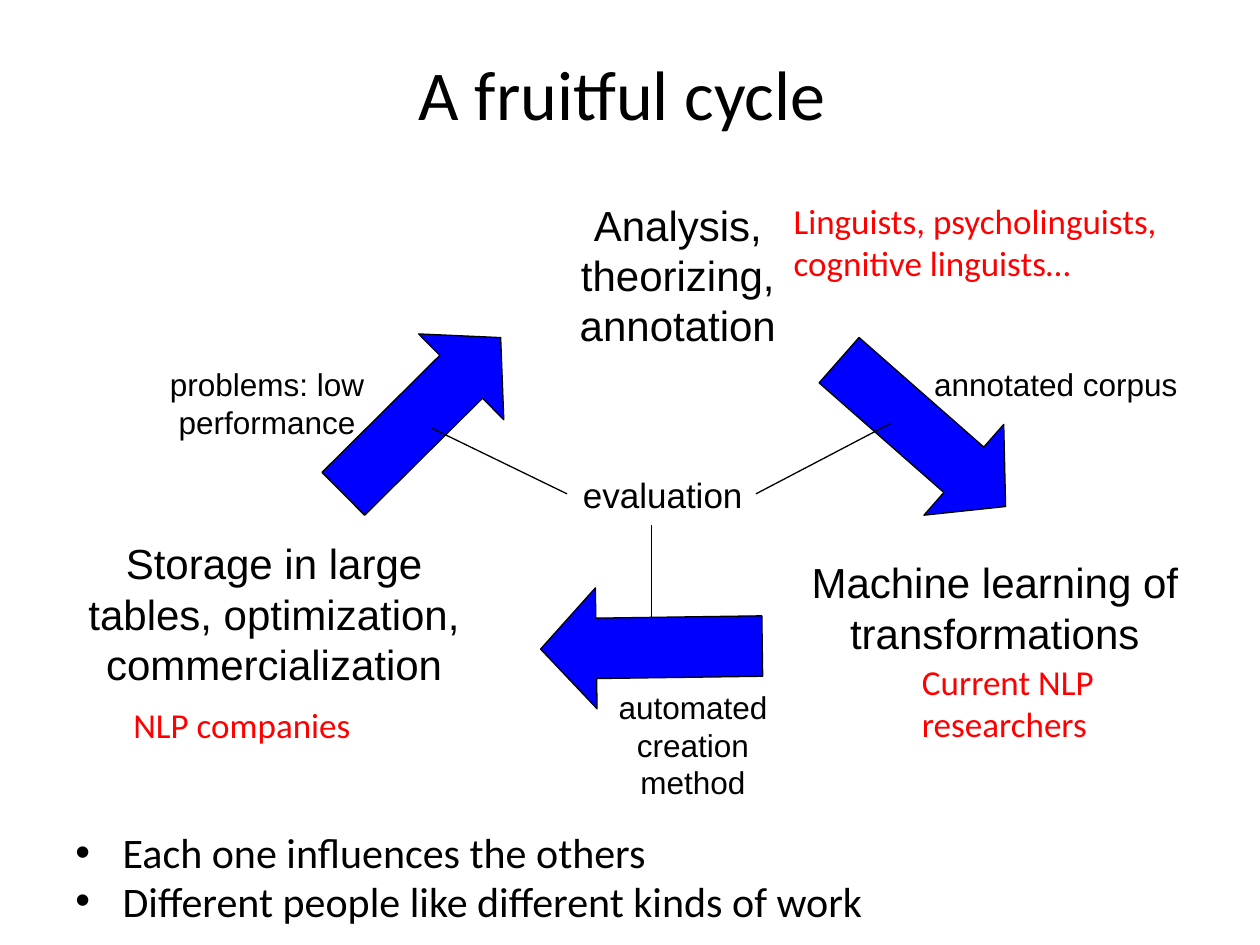
from dataclasses import dataclass

from lxml import etree
from pptx import Presentation
from pptx.dml.color import RGBColor
from pptx.enum.shapes import MSO_CONNECTOR, MSO_SHAPE
from pptx.enum.text import MSO_ANCHOR, MSO_AUTO_SIZE, PP_ALIGN
from pptx.oxml.ns import qn
from pptx.util import Pt

CENTER, LEFT = PP_ALIGN.CENTER, PP_ALIGN.LEFT
TOP, MIDDLE = MSO_ANCHOR.TOP, MSO_ANCHOR.MIDDLE
FIT_SHAPE, NO_FIT = MSO_AUTO_SIZE.SHAPE_TO_FIT_TEXT, MSO_AUTO_SIZE.NONE
RIGHT_ARROW = MSO_SHAPE.RIGHT_ARROW
STRAIGHT = MSO_CONNECTOR.STRAIGHT


@dataclass(frozen=True)
class Theme:
    ink: RGBColor = RGBColor(0, 0, 0)
    arrow: RGBColor = RGBColor(0, 0, 255)
    people: RGBColor = RGBColor(255, 0, 0)
    heading_font: str = "Calibri"
    diagram_font: str = "Arial"
    title_size: float = 40
    stage_size: float = 24
    note_size: float = 20
    label_size: float = 18
    line_width: float = 0.75


def set_format(target, values):
    for name, value in values.items():
        setattr(target, name, value)


class CycleSlide:
    def __init__(self, presentation, theme):
        self.theme = theme
        self.slide = presentation.slides.add_slide(presentation.slide_layouts[6])

    def text(self, box, lines, size, font, color=None, align=CENTER,
             anchor=TOP, fit=FIT_SHAPE):
        shape = self.slide.shapes.add_textbox(*map(Pt, box))
        frame = shape.text_frame
        set_format(frame, {"word_wrap": True, "auto_size": fit,
                           "vertical_anchor": anchor})
        frame.text = "\n".join(lines)
        for paragraph in frame.paragraphs:
            paragraph.alignment = align
            for run in paragraph.runs:
                set_format(run.font, {"name": font, "size": Pt(size)})
                run.font.color.rgb = color or self.theme.ink
        return shape

    def title(self, box, line):
        self.text(box, [line], self.theme.title_size, self.theme.heading_font,
                  anchor=MIDDLE, fit=NO_FIT)

    def diagram_text(self, box, lines, size):
        self.text(box, lines, size, self.theme.diagram_font)

    def people(self, box, line):
        self.text(box, [line], self.theme.note_size, self.theme.heading_font,
                  self.theme.people, LEFT)

    def bullets(self, box, lines):
        size = self.theme.stage_size
        shape = self.text(box, lines, size, self.theme.heading_font,
                          align=LEFT, fit=NO_FIT)
        for paragraph in shape.text_frame.paragraphs:
            set_format(paragraph, {"line_spacing": 0.8,
                                   "space_before": Pt(size * 0.2)})
            properties = paragraph._p.get_or_add_pPr()
            properties.set("marL", str(Pt(27)))
            properties.set("indent", str(Pt(-27)))
            etree.SubElement(properties, qn("a:buFont")).set("typeface", "Arial")
            etree.SubElement(properties, qn("a:buChar")).set("char", "•")

    def outline(self, line):
        line.color.rgb = self.theme.ink
        line.width = Pt(self.theme.line_width)

    def arrow(self, left, top, rotation):
        shape = self.slide.shapes.add_shape(
            RIGHT_ARROW, Pt(left), Pt(top), Pt(126.7), Pt(69.1))
        shape.rotation = rotation
        shape.adjustments[0] = 0.5
        shape.adjustments[1] = 0.46
        shape.shadow.inherit = False
        shape.fill.solid()
        shape.fill.fore_color.rgb = self.theme.arrow
        self.outline(shape.line)

    def line(self, *ends):
        connector = self.slide.shapes.add_connector(STRAIGHT, *map(Pt, ends))
        self.outline(connector.line)
        etree.SubElement(connector._element.spPr, qn("a:effectLst"))


def main():
    presentation = Presentation()
    set_format(presentation, {"slide_width": Pt(720), "slide_height": Pt(540)})
    theme = Theme()
    cycle = CycleSlide(presentation, theme)

    # Title and closing points
    cycle.title((36, 21.6, 648, 62.6), "A fruitful cycle ")
    cycle.bullets((36, 474.5, 638, 62.6),
                  ["Each one influences the others",
                   "Different people like different kinds of work"])

    # Stages of the cycle
    for box, line in (
        ((310.3, 110.2, 154.1, 94.3), "Analysis, theorizing, annotation"),
        ((456.5, 314.6, 223.9, 65.5), "Machine learning of transformations"),
        ((36, 303.8, 241.2, 94.3),
         "Storage in large tables, optimization, commercialization"),
    ):
        cycle.diagram_text(box, [line], theme.stage_size)

    # Arrows between stages, each with its label
    for arrow, box, lines in (
        ((463.7, 213.1, 41.3), (526.3, 205.2, 154.1, 28.8),
         ["annotated corpus"]),
        ((308.9, 335.5, 179.2), (324, 389.5, 144, 72.7),
         ["automated", "creation", "method"]),
        ((177.8, 203, 315.2), (75.6, 205.2, 154.1, 51.1),
         ["problems: low performance"]),
    ):
        cycle.arrow(*arrow)
        cycle.diagram_text(box, lines, theme.label_size)

    # Evaluation hub with a line to every arrow
    cycle.diagram_text((301.7, 267.1, 154.1, 31), ["evaluation"], theme.note_size)
    for ends in ((247, 244.8, 324, 282.2),
                 (372.2, 300.2, 372.2, 354.2),
                 (432, 282.2, 509, 241.9)):
        cycle.line(*ends)

    # People at each stage
    for box, line in (
        ((446.4, 110.2, 234, 55.4),
         "Linguists, psycholinguists, cognitive linguists…"),
        ((519.8, 373.7, 146.9, 55.4), "Current NLP researchers"),
        ((69.1, 398.2, 185.8, 31.7), "NLP companies"),
    ):
        cycle.people(box, line)

    presentation.save("out.pptx")


if __name__ == "__main__":
    main()
